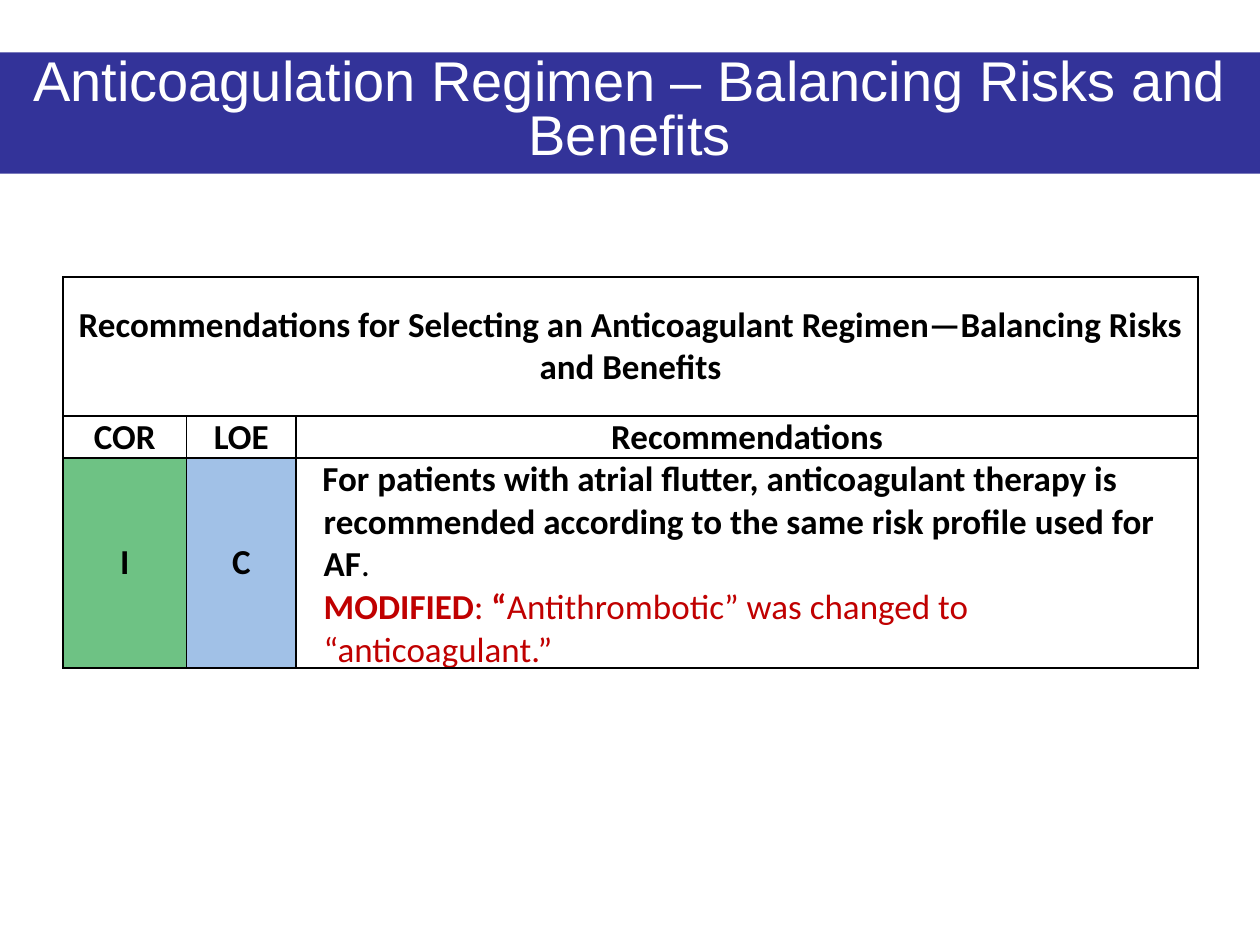
from lxml import etree
from pptx import Presentation
from pptx.dml.color import RGBColor
from pptx.enum.shapes import MSO_SHAPE
from pptx.enum.text import MSO_ANCHOR, MSO_AUTO_SIZE, PP_ALIGN
from pptx.oxml.ns import qn
from pptx.util import Pt

RECTANGLE = MSO_SHAPE.RECTANGLE
TOP, MIDDLE = MSO_ANCHOR.TOP, MSO_ANCHOR.MIDDLE
LEFT, CENTER = PP_ALIGN.LEFT, PP_ALIGN.CENTER
GROW = MSO_AUTO_SIZE.SHAPE_TO_FIT_TEXT

COLORS = {
    "banner": "333399",
    "white": "FFFFFF",
    "black": "000000",
    "class_one": "6EC284",
    "level_c": "A1C1E7",
    "modified": "C00000",
}
TITLE_FONT = {"name": "Arial", "size": Pt(32), "bold": False}
TABLE_FONT = {"name": "Calibri", "size": Pt(20), "bold": True}
CELL_FORMAT = {
    "margin_left": Pt(1.44),
    "margin_right": Pt(1.44),
    "margin_top": 0,
    "margin_bottom": 0,
}

TITLE = "Anticoagulation Regimen – Balancing Risks and Benefits"
TABLE_TITLE = (
    "Recommendations for Selecting an Anticoagulant Regimen—Balancing Risks and Benefits"
)
HEADINGS = ["COR", "LOE", "Recommendations"]
RATINGS = [("I", "class_one"), ("C", "level_c")]
RECOMMENDATION = [
    (-0.72, [
        ("For patients with atrial flutter, anticoagulant therapy is recommended "
         "according to the same risk profile used for AF", True, "black"),
        (".", False, "black"),
    ]),
    (-14.4, [
        ("\t", True, "black"),
        ("MODIFIED", True, "modified"),
        (":", False, "modified"),
        (" “", True, "modified"),
        ("Antithrombotic” was changed to “anticoagulant.”", False, "modified"),
    ]),
]
COLUMN_WIDTHS = [70.6, 62.6, 515.5]
ROW_HEIGHTS = [79.2, 20.2, 99.4]


def apply_format(target, values):
    for name, value in values.items():
        setattr(target, name, value)


def add_run(paragraph, text, font, color):
    run = paragraph.add_run()
    run.text = text
    apply_format(run.font, font)
    run.font.color.rgb = RGBColor.from_string(COLORS[color])


def set_fill(target, color):
    target.fill.solid()
    target.fill.fore_color.rgb = RGBColor.from_string(COLORS[color])


def add_banner(slide, left, top, width, height):
    shape = slide.shapes.add_shape(RECTANGLE, Pt(left), Pt(top), Pt(width), Pt(height))
    shape.shadow.inherit = False
    set_fill(shape, "banner")
    shape.line.fill.background()
    apply_format(
        shape.text_frame,
        {"word_wrap": True, "auto_size": GROW, "vertical_anchor": TOP},
    )
    paragraph = shape.text_frame.paragraphs[0]
    apply_format(paragraph, {"alignment": CENTER, "line_spacing": 0.8})
    add_run(paragraph, TITLE, TITLE_FONT, "white")


def set_borders(cell):
    properties = cell._tc.get_or_add_tcPr()
    for side in ("a:lnL", "a:lnR", "a:lnT", "a:lnB"):
        line = etree.SubElement(properties, qn(side), w=str(Pt(1)))
        fill = etree.SubElement(line, qn("a:solidFill"))
        etree.SubElement(fill, qn("a:srgbClr"), val=COLORS["black"])


def fill_centered_cell(cell, text):
    cell.vertical_anchor = MIDDLE
    paragraph = cell.text_frame.paragraphs[0]
    paragraph.alignment = CENTER
    add_run(paragraph, text, TABLE_FONT, "black")


def fill_recommendation_cell(cell):
    cell.vertical_anchor = TOP
    frame = cell.text_frame
    for index, (indent, runs) in enumerate(RECOMMENDATION):
        paragraph = frame.add_paragraph() if index else frame.paragraphs[0]
        paragraph.alignment = LEFT
        properties = paragraph._p.get_or_add_pPr()
        properties.set("marL", str(Pt(14.4)))
        properties.set("indent", str(Pt(indent)))
        for text, bold, color in runs:
            add_run(paragraph, text, {**TABLE_FONT, "bold": bold}, color)


def add_recommendation_table(slide, left, top, width, height):
    table = slide.shapes.add_table(
        len(ROW_HEIGHTS), len(COLUMN_WIDTHS), Pt(left), Pt(top), Pt(width), Pt(height)
    ).table
    apply_format(table, {"first_row": False, "horz_banding": False})
    for column, column_width in zip(table.columns, COLUMN_WIDTHS):
        column.width = Pt(column_width)
    for row, row_height in zip(table.rows, ROW_HEIGHTS):
        row.height = Pt(row_height)
    for cell in table.iter_cells():
        apply_format(cell, CELL_FORMAT)
        set_borders(cell)
        cell.fill.background()

    table.cell(0, 0).merge(table.cell(0, len(COLUMN_WIDTHS) - 1))
    fill_centered_cell(table.cell(0, 0), TABLE_TITLE)
    for column, heading in enumerate(HEADINGS):
        fill_centered_cell(table.cell(1, column), heading)
    for column, (rating, color) in enumerate(RATINGS):
        cell = table.cell(2, column)
        fill_centered_cell(cell, rating)
        set_fill(cell, color)
    fill_recommendation_cell(table.cell(2, 2))


def main():
    presentation = Presentation()
    presentation.slide_width = Pt(720)
    presentation.slide_height = Pt(540)
    slide = presentation.slides.add_slide(presentation.slide_layouts[6])
    add_banner(slide, 0, 30, 720, 69.2)
    add_recommendation_table(slide, 36, 158.4, sum(COLUMN_WIDTHS), sum(ROW_HEIGHTS))
    presentation.save("out.pptx")


if __name__ == "__main__":
    main()
